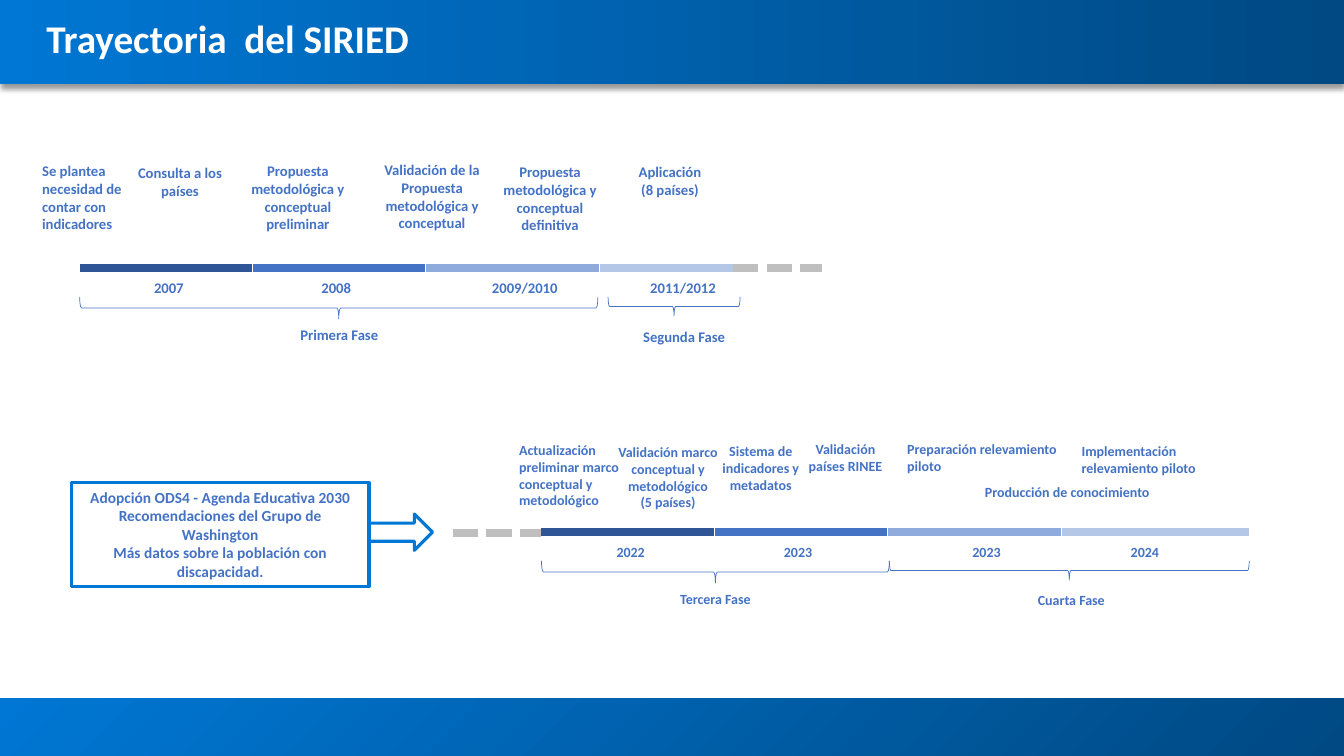
import pptx
import pptx.util
import pptx.dml.color
import pptx.enum.dml
import pptx.enum.shapes
import pptx.enum.text
import pptx.oxml.ns
from dataclasses import dataclass
from lxml import etree

Inches, Pt = pptx.util.Inches, pptx.util.Pt
RGB = pptx.dml.color.RGBColor.from_string
SHAPE = pptx.enum.shapes.MSO_SHAPE
ALIGN = pptx.enum.text.PP_ALIGN
ANCHOR = pptx.enum.text.MSO_ANCHOR
qn = pptx.oxml.ns.qn


@dataclass(frozen=True)
class Theme:
    font: str = "Calibri"
    text: str = "4472C4"
    white: str = "FFFFFF"
    bright: str = "0077D4"
    deep: str = "004983"
    dash: str = "BFBFBF"
    bars: tuple = ("2F5597", "4472C4", "8FAADC", "B4C7E7")
    title: float = 28
    first: float = 10.5
    second: float = 10
    context: float = 11
    bar_width: float = 6
    outline: float = 2.25
    hairline: float = 0.5


THEME = Theme()
SEGMENT, PITCH = 1.71, 1.72
YEAR_OFFSETS = (0.35, 2.01, 3.88, 5.45)


def add_shape(slide, kind, x, y, w, h, line=None, width=0):
    sp = slide.shapes.add_shape(kind, Inches(x), Inches(y), Inches(w), Inches(h))
    sp.shadow.inherit = False
    sp.fill.background()
    if line:
        sp.line.color.rgb = RGB(line)
        sp.line.width = Pt(width)
    else:
        sp.line.fill.background()
    return sp


def write(tf, text, size, align=ALIGN.CENTER, color=THEME.text):
    tf.word_wrap = True
    tf.text = text
    for p in tf.paragraphs:
        p.alignment = align
        p.font.name = THEME.font
        p.font.size = Pt(size)
        p.font.bold = True
        p.font.color.rgb = RGB(color)


def add_label(slide, x, y, w, h, text, size, align=ALIGN.CENTER):
    tb = slide.shapes.add_textbox(Inches(x), Inches(y), Inches(w), Inches(h))
    write(tb.text_frame, text, size, align)
    tb.text_frame.auto_size = pptx.enum.text.MSO_AUTO_SIZE.SHAPE_TO_FIT_TEXT


def add_bar(slide, x1, x2, y, color, dashed=False):
    bar = slide.shapes.add_connector(
        pptx.enum.shapes.MSO_CONNECTOR.STRAIGHT,
        Inches(x1), Inches(y), Inches(x2), Inches(y))
    bar.line.color.rgb = RGB(color)
    bar.line.width = Pt(THEME.bar_width)
    if dashed:
        bar.line.dash_style = pptx.enum.dml.MSO_LINE.SQUARE_DOT
    etree.SubElement(bar._element.spPr, qn("a:effectLst"))


def add_brace(slide, x, y, w, h):
    sp = add_shape(slide, SHAPE.RIGHT_BRACE, x + (w - h) / 2, y - (w - h) / 2,
                   h, w, THEME.text, THEME.hairline)
    sp.rotation = 90


def add_band(slide, y, h, colors, angle):
    band = add_shape(slide, SHAPE.RECTANGLE, 0, y, 13.33, h)
    band.fill.gradient()
    band.fill.gradient_angle = angle
    for stop, color in zip(band.fill.gradient_stops, colors):
        stop.color.rgb = RGB(color)
    return band


def add_frame(slide, title):
    add_band(slide, 6.93, 0.57, (THEME.deep, THEME.bright), 135)
    header = add_band(slide, 0, 0.83, (THEME.bright, THEME.deep), 0)
    effects = header._element.spPr.find(qn("a:effectLst"))
    shadow = etree.SubElement(effects, qn("a:outerShdw"), blurRad=str(Pt(4)),
                              dist=str(Pt(3)), dir="5400000", rotWithShape="0")
    black = etree.SubElement(shadow, qn("a:srgbClr"), val="000000")
    etree.SubElement(black, qn("a:alpha"), val="40000")

    sp = slide.shapes.title
    slide.shapes._spTree.append(sp._element)
    sp.left, sp.top, sp.width, sp.height = map(Inches, (0.46, 0.17, 12.41, 0.5))
    tf = sp.text_frame
    write(tf, title, THEME.title, ALIGN.LEFT, THEME.white)
    tf.margin_left = tf.margin_right = tf.margin_top = tf.margin_bottom = 0
    tf.vertical_anchor = ANCHOR.MIDDLE
    tf.paragraphs[0].line_spacing = Pt(27.8)


def add_timeline(slide, x, y, length, size, years, milestones, phases):
    for i, (year, dx, color) in enumerate(zip(years, YEAR_OFFSETS, THEME.bars)):
        start = i * PITCH
        end = length if i == len(years) - 1 else start + SEGMENT
        add_bar(slide, x + start, x + end, y, color)
        add_label(slide, x + dx + 0.02, y + 0.06, 1.03, 0.45, year, size)
    for dx, dy, w, align, text in milestones:
        add_label(slide, x + dx, y + dy, w, 0.8, text, size, align)
    for dx, w, depth, label_dx, label_dy, text in phases:
        add_brace(slide, x + dx, y + 0.285, w, depth)
        add_label(slide, x + label_dx, y + label_dy, 1.19, 0.45, text, size)


def add_context(slide, x, y, w, h, text):
    box = add_shape(slide, SHAPE.RECTANGLE, x, y, w, h, THEME.bright, THEME.outline)
    write(box.text_frame, text, THEME.context)
    box.text_frame.vertical_anchor = ANCHOR.TOP
    add_shape(slide, SHAPE.RIGHT_ARROW, x + w, y + 0.31, 0.63, 0.36,
              THEME.bright, THEME.outline)


def main():
    prs = pptx.Presentation()
    prs.slide_width, prs.slide_height = Inches(13.33), Inches(7.5)
    slide = prs.slides.add_slide(prs.slide_layouts[5])
    left, center = ALIGN.LEFT, ALIGN.CENTER

    add_frame(slide, "Trayectoria  del SIRIED")
    add_timeline(
        slide, 0.79, 2.66, 6.48, THEME.first,
        ("2007", "2008", "2009/2010", "2011/2012"),
        ((-0.47, -1.1, 1.04, left, "Se plantea necesidad de contar con indicadores"),
         (0.4, -1.08, 1.19, center, "Consulta a los países"),
         (1.57, -1.1, 1.19, center, "Propuesta metodológica y conceptual preliminar"),
         (2.9, -1.11, 1.19, center,
          "Validación de la Propuesta metodológica y conceptual"),
         (4.07, -1.09, 1.19, center, "Propuesta metodológica y conceptual definitiva"),
         (5.26, -1.09, 1.19, center, "Aplicación\n(8 países)")),
        ((0, 5.14, 0.22, 1.98, 0.52, "Primera Fase"),
         (5.24, 1.31, 0.19, 5.4, 0.54, "Segunda Fase")))
    add_bar(slide, 7.27, 8.15, 2.66, THEME.dash, dashed=True)

    add_timeline(
        slide, 5.37, 5.28, 7.02, THEME.second,
        ("2022", "2023", "2023", "2024"),
        ((-0.32, -0.95, 1.22, left,
          "Actualización preliminar marco conceptual y metodológico"),
         (0.66, -0.93, 1.19, center,
          "Validación marco conceptual y metodológico\n(5 países)"),
         (1.58, -0.94, 1.19, center, "Sistema de indicadores y metadatos"),
         (2.42, -0.96, 1.19, center, "Validación\npaíses RINEE"),
         (3.53, -0.96, 1.9, left, "Preparación relevamiento\npiloto"),
         (5.26, -0.94, 1.9, left, "Implementación relevamiento piloto"),
         (4.3, -0.53, 1.9, left, "Producción de conocimiento")),
        ((0, 3.45, 0.22, 1.13, 0.53, "Tercera Fase"),
         (3.45, 3.57, 0.19, 4.66, 0.54, "Cuarta Fase")))
    add_bar(slide, 4.49, 5.37, 5.29, THEME.dash, dashed=True)

    add_context(slide, 0.71, 4.79, 2.95, 1.03,
                "Adopción ODS4 - Agenda Educativa 2030\n"
                "Recomendaciones del Grupo de Washington\n"
                "Más datos sobre la población con discapacidad.")
    prs.save("out.pptx")


if __name__ == "__main__":
    main()
